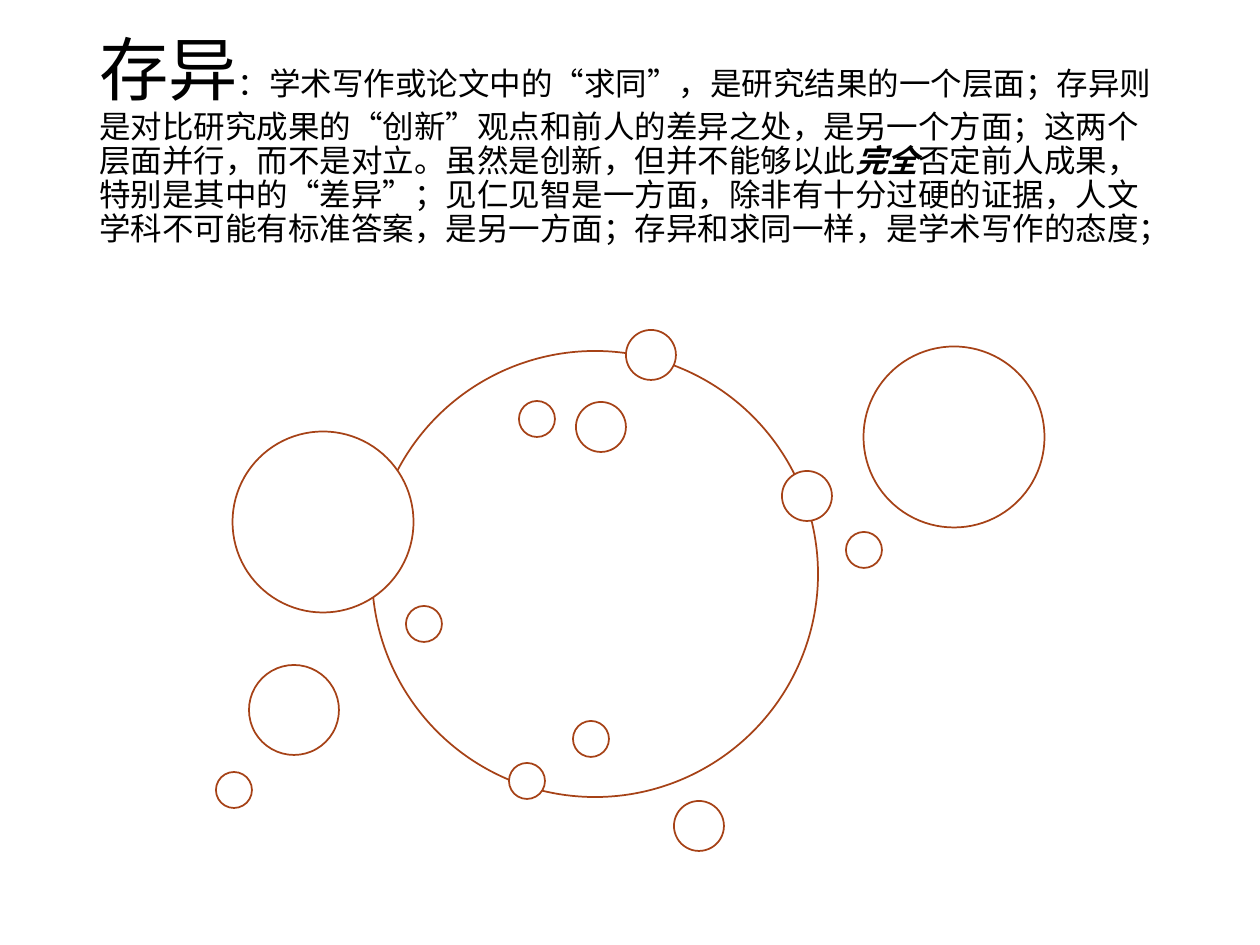
from dataclasses import dataclass

from pptx import Presentation, util as u
from pptx.dml.color import RGBColor
from pptx.enum import shapes, text

SCALE = u.Inches(1) / 126


@dataclass(frozen=True)
class Theme:
    ink: RGBColor = RGBColor(0x00, 0x00, 0x00)
    fill: RGBColor = RGBColor(0xFF, 0xFF, 0xFF)
    line: RGBColor = RGBColor(0xA6, 0x42, 0x17)
    font: str = "Times New Roman"
    head: float = 39.6
    body: float = 18
    stroke: float = 1


@dataclass(frozen=True)
class Circle:
    x: int  # centre
    y: int
    size: int


@dataclass(frozen=True)
class Part:
    words: str
    size: float
    strong: bool = False


THEME = Theme()

# Circle diameters
HUGE, LARGE, MID, SMALL, TINY = 446, 181, 90, 50, 36

# Back to front
CIRCLES = [
    Circle(595, 574, HUGE),
    Circle(651, 355, SMALL),
    Circle(527, 781, TINY),
    Circle(864, 550, TINY),
    Circle(699, 826, SMALL),
    Circle(537, 419, TINY),
    Circle(424, 624, TINY),
    Circle(323, 522, LARGE),
    Circle(601, 427, SMALL),
    Circle(294, 710, MID),
    Circle(954, 437, LARGE),
    Circle(807, 496, SMALL),
    Circle(234, 790, TINY),
    Circle(591, 739, TINY),
]

PARTS = [
    Part("存异", THEME.head),
    Part("：学术写作或论文中的“求同”，是研究结果的一个层面；存异则是对比研究成果的“创新”"
         "观点和前人的差异之处，是另一个方面；这两个层面并行，而不是对立。虽然是创新，"
         "但并不能够以此", THEME.body),
    Part("完全", THEME.body, True),
    Part("否定前人成果，特别是其中的“差异”；见仁见智是一方面，除非有十分过硬的证据，"
         "人文学科不可能有标准答案，是另一方面；存异和求同一样，是学术写作的态度；",
         THEME.body),
]


def px(n: float) -> int:
    return round(n * SCALE)


def write(slide, parts: list[Part]) -> None:
    box = slide.shapes.add_textbox(px(87), px(50), px(1086), px(183))
    frame = box.text_frame
    frame.word_wrap = True
    frame.vertical_anchor = text.MSO_ANCHOR.MIDDLE
    para = frame.paragraphs[0]
    para.line_spacing = 0.9
    para.font.name = THEME.font
    para.font.color.rgb = THEME.ink
    for part in parts:
        run = para.add_run()
        run.text = part.words
        run.font.name = THEME.font
        run.font.size = u.Pt(part.size)
        if part.strong:
            run.font.bold = run.font.italic = True


def draw(group, circle: Circle) -> None:
    half = circle.size / 2
    shape = group.shapes.add_shape(
        shapes.MSO_SHAPE.OVAL, px(circle.x - half), px(circle.y - half),
        px(circle.size), px(circle.size))
    shape.shadow.inherit = False
    shape.fill.solid()
    shape.fill.fore_color.rgb = THEME.fill
    shape.line.color.rgb = THEME.line
    shape.line.width = u.Pt(THEME.stroke)


def main() -> None:
    deck = Presentation()
    deck.slide_width, deck.slide_height = px(1260), px(945)
    slide = deck.slides.add_slide(deck.slide_layouts[6])

    # Opening paragraph
    write(slide, PARTS)

    # Cluster of circles
    group = slide.shapes.add_group_shape()
    for circle in CIRCLES:
        draw(group, circle)

    deck.save("out.pptx")


if __name__ == "__main__":
    main()
